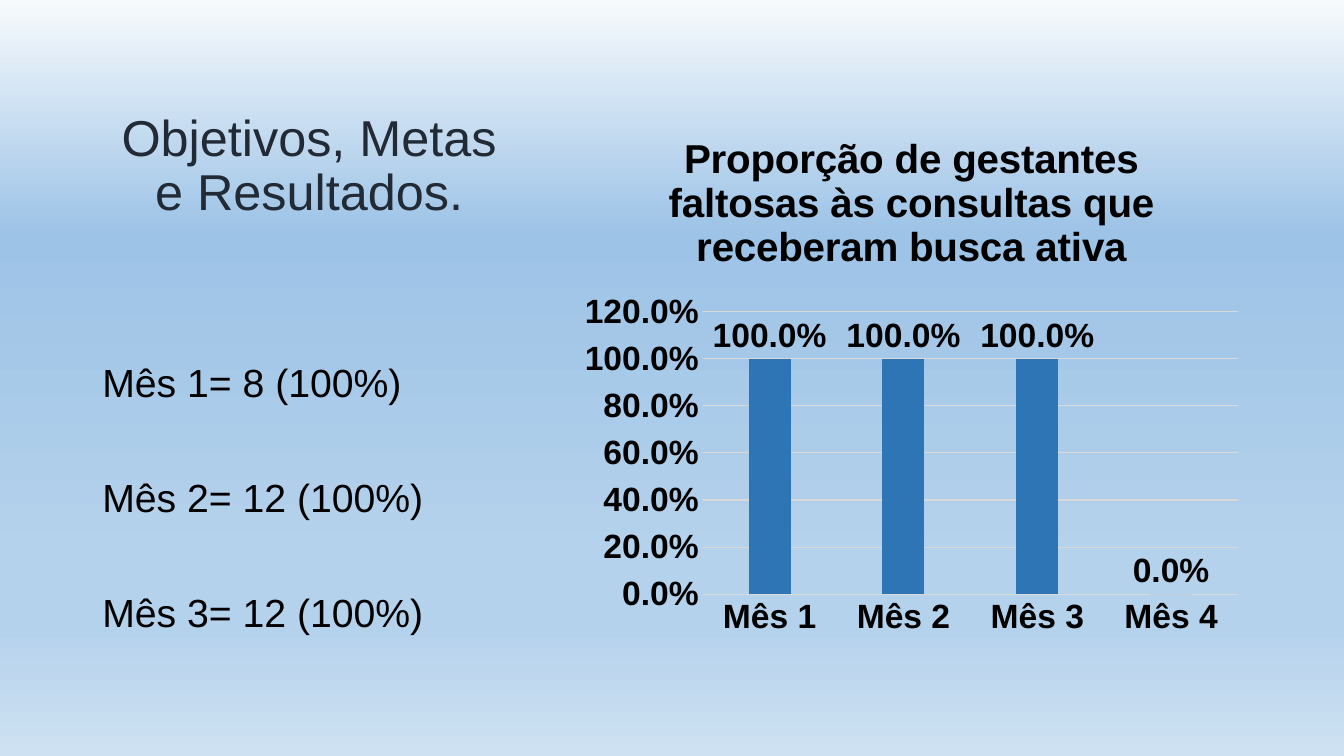
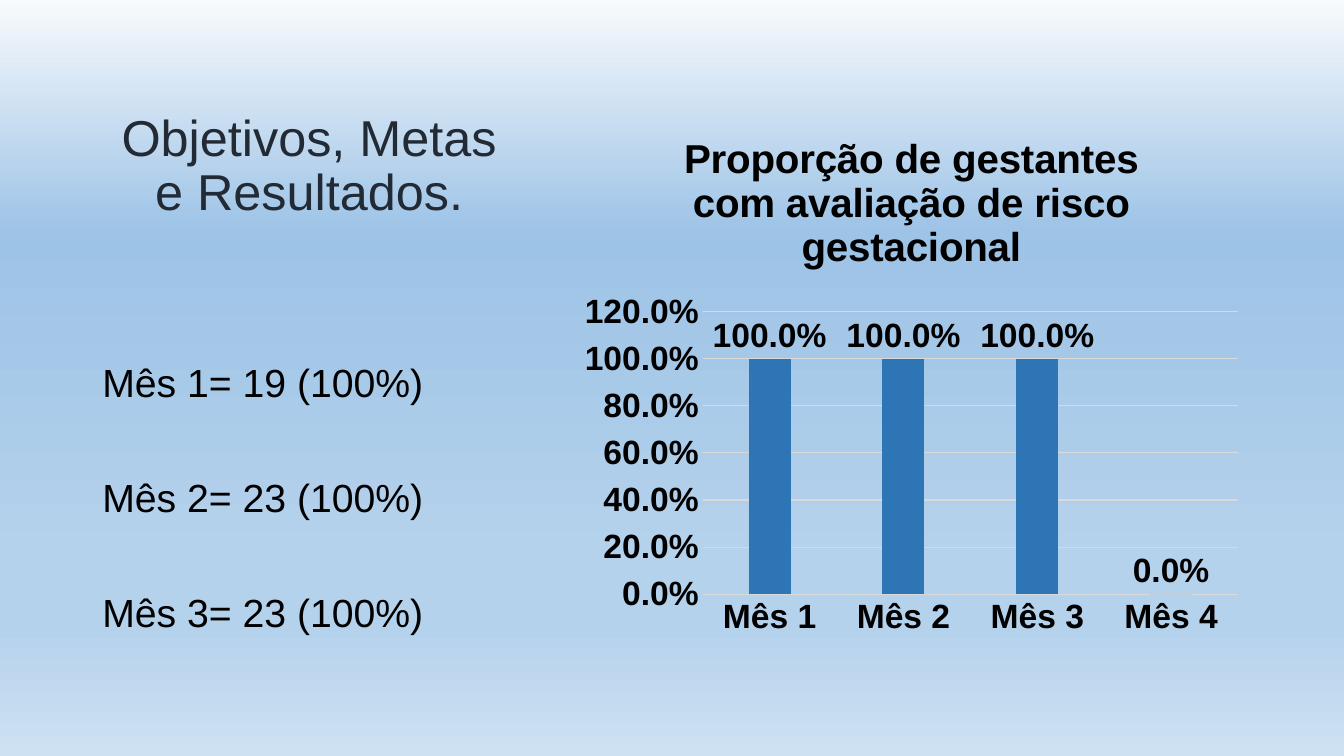
import pptx
import pptx.chart.data
import pptx.dml.color
import pptx.enum.chart
import pptx.enum.text
import pptx.oxml
import pptx.oxml.ns
import pptx.util

PX = 9525
COLORS = {
    "title": "222A35",
    "text": "000000",
    "bar": "2E75B6",
    "grid": "D9D9D9",
}
BACKGROUND_STOPS = [(0, "F7FAFD"), (31, "9DC3E6"), (74, "B5D2EC"), (83, "B5D2EC"), (100, "CEE1F2")]
TITLE = "Objetivos, Metas e Resultados."
TITLE_BOX = {"left": 88, "top": 48, "width": 413, "height": 168}
CHART_BOX = (544, 104, 648, 512)
MONTHS_BOX = (88, 280, 413, 336)
CHART_MONTHS = ["Mês 1", "Mês 2", "Mês 3", "Mês 4"]
RATES = [1, 1, 1, 0]
PERCENT = "0.0%"
RESULTS = [
    ("Proporção de gestantes faltosas às consultas que receberam busca ativa",
     ["Mês 1= 8 (100%)", "Mês 2= 12 (100%)", "Mês 3= 12 (100%)"]),
    ("Proporção de gestantes com avaliação de risco gestacional",
     ["Mês 1= 19 (100%)", "Mês 2= 23 (100%)", "Mês 3= 23 (100%)"]),
]
TITLE_FRAME = {
    "text": TITLE,
    "word_wrap": True,
    "auto_size": pptx.enum.text.MSO_AUTO_SIZE.NONE,
    "vertical_anchor": pptx.enum.text.MSO_ANCHOR.BOTTOM,
}
MONTHS_FRAME = {"word_wrap": True, "margin_top": 66 * PX}
PLOT_FORMAT = {"gap_width": 219, "overlap": -27, "vary_by_categories": False, "has_data_labels": True}
LABEL_FORMAT = {
    "show_value": True,
    "number_format": PERCENT,
    "number_format_is_linked": False,
    "position": pptx.enum.chart.XL_LABEL_POSITION.OUTSIDE_END,
}
AXIS_FORMAT = {
    "major_tick_mark": pptx.enum.chart.XL_TICK_MARK.NONE,
    "minor_tick_mark": pptx.enum.chart.XL_TICK_MARK.NONE,
}
RATE_AXIS_FORMAT = {"minimum_scale": 0, "maximum_scale": 1.2, "major_unit": 0.2, "has_major_gridlines": True}


def apply_format(target, values):
    for attribute, value in values.items():
        setattr(target, attribute, value)


def style_font(font, size, color="text", bold=False):
    apply_format(font, {"name": "Arial", "size": pptx.util.Pt(size), "bold": bold})
    font.color.rgb = pptx.dml.color.RGBColor.from_string(COLORS[color])


deck = pptx.Presentation()
apply_format(deck, {"slide_width": 1280 * PX, "slide_height": 720 * PX})

background = deck.slide_master.background.fill
background.gradient()
background.gradient_angle = 270
stop_list = deck.slide_master.element.cSld.find(".//" + pptx.oxml.ns.qn("a:gsLst"))
for default_stop in list(stop_list):
    stop_list.remove(default_stop)
for position, color in BACKGROUND_STOPS:
    stop_list.append(pptx.oxml.parse_xml(
        f'<a:gs {pptx.oxml.ns.nsdecls("a")} pos="{position * 1000}"><a:srgbClr val="{color}"/></a:gs>'))

title_only = deck.slide_layouts[5]
for indicator, month_results in RESULTS:
    slide = deck.slides.add_slide(title_only)

    title = slide.shapes.title
    apply_format(title, {side: length * PX for side, length in TITLE_BOX.items()})
    apply_format(title.text_frame, TITLE_FRAME)
    heading = title.text_frame.paragraphs[0]
    apply_format(heading, {"alignment": pptx.enum.text.PP_ALIGN.CENTER, "line_spacing": 0.9})
    style_font(heading.runs[0].font, 36, "title")

    rates = pptx.chart.data.CategoryChartData(number_format=PERCENT)
    rates.categories = CHART_MONTHS
    rates.add_series(indicator, RATES)
    chart = slide.shapes.add_chart(
        pptx.enum.chart.XL_CHART_TYPE.COLUMN_CLUSTERED,
        *(length * PX for length in CHART_BOX), rates).chart
    apply_format(chart, {"has_legend": False, "has_title": True})
    style_font(chart.font, 24, bold=True)
    chart.chart_title.include_in_layout = False
    chart.chart_title.text_frame.text = indicator
    style_font(chart.chart_title.text_frame.paragraphs[0].runs[0].font, 28.8, bold=True)

    plot = chart.plots[0]
    apply_format(plot, PLOT_FORMAT)
    apply_format(plot.data_labels, LABEL_FORMAT)
    style_font(plot.data_labels.font, 24, bold=True)
    bars = plot.series[0].format.fill
    bars.solid()
    bars.fore_color.rgb = pptx.dml.color.RGBColor.from_string(COLORS["bar"])

    month_axis, rate_axis = chart.category_axis, chart.value_axis
    for axis in (month_axis, rate_axis):
        apply_format(axis, AXIS_FORMAT)
        style_font(axis.tick_labels.font, 24, bold=True)
    apply_format(rate_axis, RATE_AXIS_FORMAT)
    apply_format(rate_axis.tick_labels, {"number_format": PERCENT, "number_format_is_linked": False})
    rate_axis.format.line.fill.background()
    for line in (month_axis.format.line, rate_axis.major_gridlines.format.line):
        line.width = pptx.util.Pt(0.75)
        line.color.rgb = pptx.dml.color.RGBColor.from_string(COLORS["grid"])

    months = slide.shapes.add_textbox(*(length * PX for length in MONTHS_BOX)).text_frame
    apply_format(months, MONTHS_FRAME)
    months.text = "\n".join(month_results)
    for index, month in enumerate(months.paragraphs):
        apply_format(month, {"line_spacing": 0.9, "space_before": pptx.util.Pt(52 if index else 0)})
        style_font(month.runs[0].font, 28)

deck.save("out.pptx")
